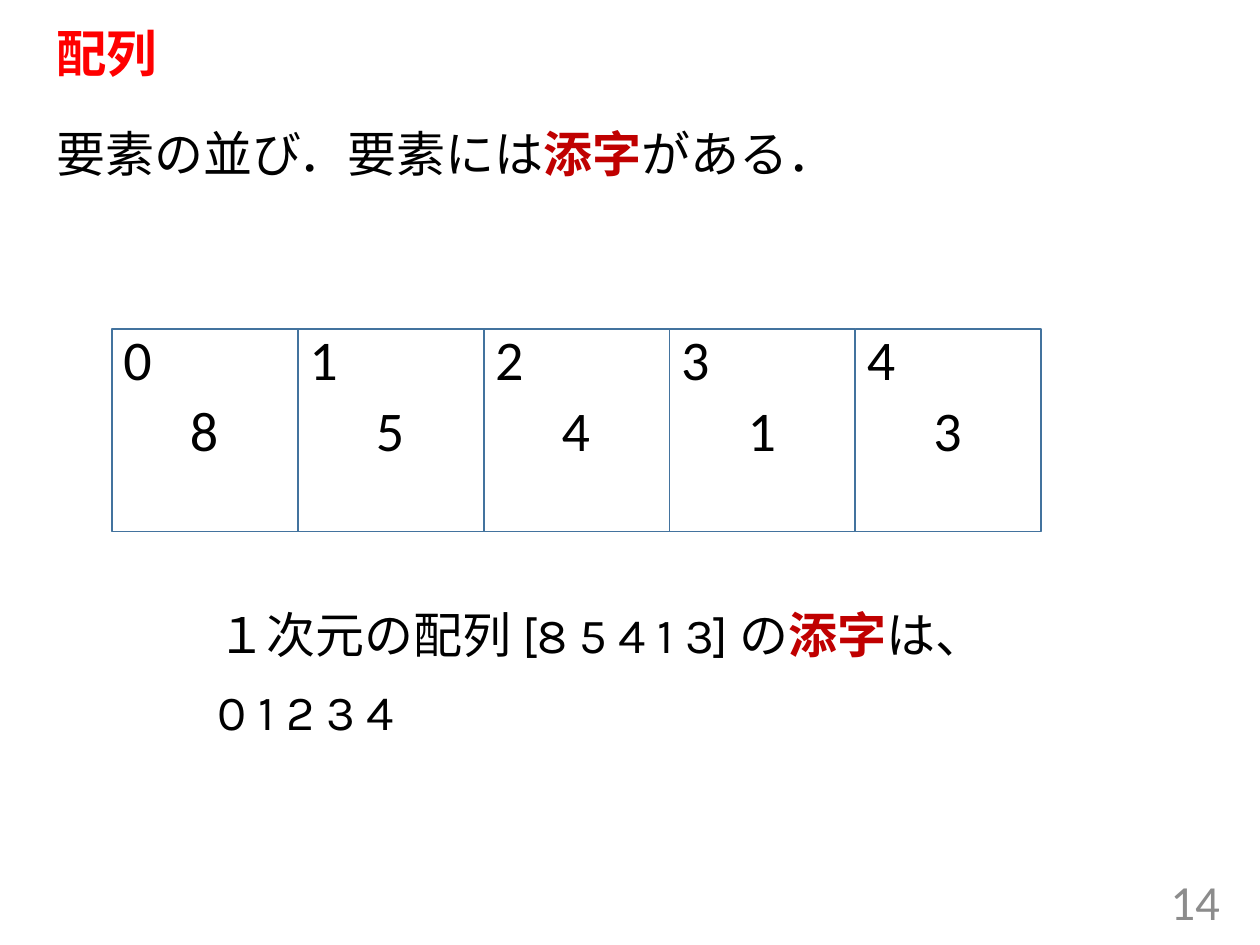
from dataclasses import dataclass

from pptx import Presentation
from pptx.dml.color import RGBColor
from pptx.enum.shapes import MSO_SHAPE
from pptx.enum.text import MSO_ANCHOR, MSO_AUTO_SIZE, PP_ALIGN
from pptx.util import Pt


@dataclass(frozen=True)
class Theme:
    main_font: str = "Calibri"
    example_font: str = "Karla"
    title_size: float = 28.8
    body_size: float = 28
    cell_size: float = 32
    text: RGBColor = RGBColor(0, 0, 0)
    title: RGBColor = RGBColor(0xFF, 0, 0)
    keyword: RGBColor = RGBColor(0xC0, 0, 0)
    page_number: RGBColor = RGBColor(0x8C, 0x8C, 0x8C)
    cell_line: RGBColor = RGBColor(0x43, 0x73, 0x9E)


theme = Theme()
KEYWORD = "添字"


def add_text(left, top, width, height, lines, size, color=theme.text,
             font=theme.main_font, wrap=True, anchor=MSO_ANCHOR.TOP):
    """Add a text box with one paragraph per line, the keyword emphasised."""
    box = slide.shapes.add_textbox(Pt(left), Pt(top), Pt(width), Pt(height))
    frame = box.text_frame
    frame.word_wrap = wrap
    frame.vertical_anchor = anchor
    for number, line in enumerate(lines):
        paragraph = frame.add_paragraph() if number else frame.paragraphs[0]
        if number:
            paragraph.space_before = Pt(10)
        paragraph.font.name = font
        paragraph.font.size = Pt(size)
        paragraph.font.color.rgb = color
        before, keyword, after = line.partition(KEYWORD)
        for part in filter(None, (before, keyword, after)):
            run = paragraph.add_run()
            run.text = part
            if part == KEYWORD:
                run.font.bold = True
                run.font.color.rgb = theme.keyword
    return frame


presentation = Presentation()
presentation.slide_width = Pt(720)
presentation.slide_height = Pt(540)
slide = presentation.slides.add_slide(presentation.slide_layouts[6])

# Title and definition
title = add_text(25.2, 13.7, 666, 36.7, ["配列"], theme.title_size,
                 theme.title, anchor=MSO_ANCHOR.MIDDLE)
title.paragraphs[0].font.bold = True
title.paragraphs[0].line_spacing = 0.9
add_text(25.2, 67, 666, 47.5, ["要素の並び．要素には添字がある．"], theme.body_size)

# Page number
page_number = add_text(542.2, 500.4, 162, 28.8, ["14"], theme.body_size,
                       theme.page_number, anchor=MSO_ANCHOR.MIDDLE)
page_number.paragraphs[0].alignment = PP_ALIGN.RIGHT

# Example in words
add_text(117.4, 342, 459.4, 146.9,
         ["１次元の配列 [8 5 4 1 3] の添字は、", "0 1 2 3 4"],
         theme.body_size, font=theme.example_font)

# Array cells, each with its index in the corner and its value in the middle
values = [8, 5, 4, 1, 3]
cell_left, cell_top, cell_width, cell_height = 64, 187.8, 106.2, 115.9
for index, value in enumerate(values):
    left = cell_left + index * cell_width
    cell = slide.shapes.add_shape(MSO_SHAPE.RECTANGLE, Pt(left), Pt(cell_top),
                                  Pt(cell_width), Pt(cell_height))
    cell.shadow.inherit = False
    cell.fill.background()
    cell.line.color.rgb = theme.cell_line
    cell.line.width = Pt(1)
    for label, across, down in ((value, 37.5, 34.4), (index, -0.5, -6)):
        frame = add_text(left + across, cell_top + down, 31, 46, [str(label)],
                         theme.cell_size, wrap=False)
        frame.auto_size = MSO_AUTO_SIZE.SHAPE_TO_FIT_TEXT

presentation.save("out.pptx")
